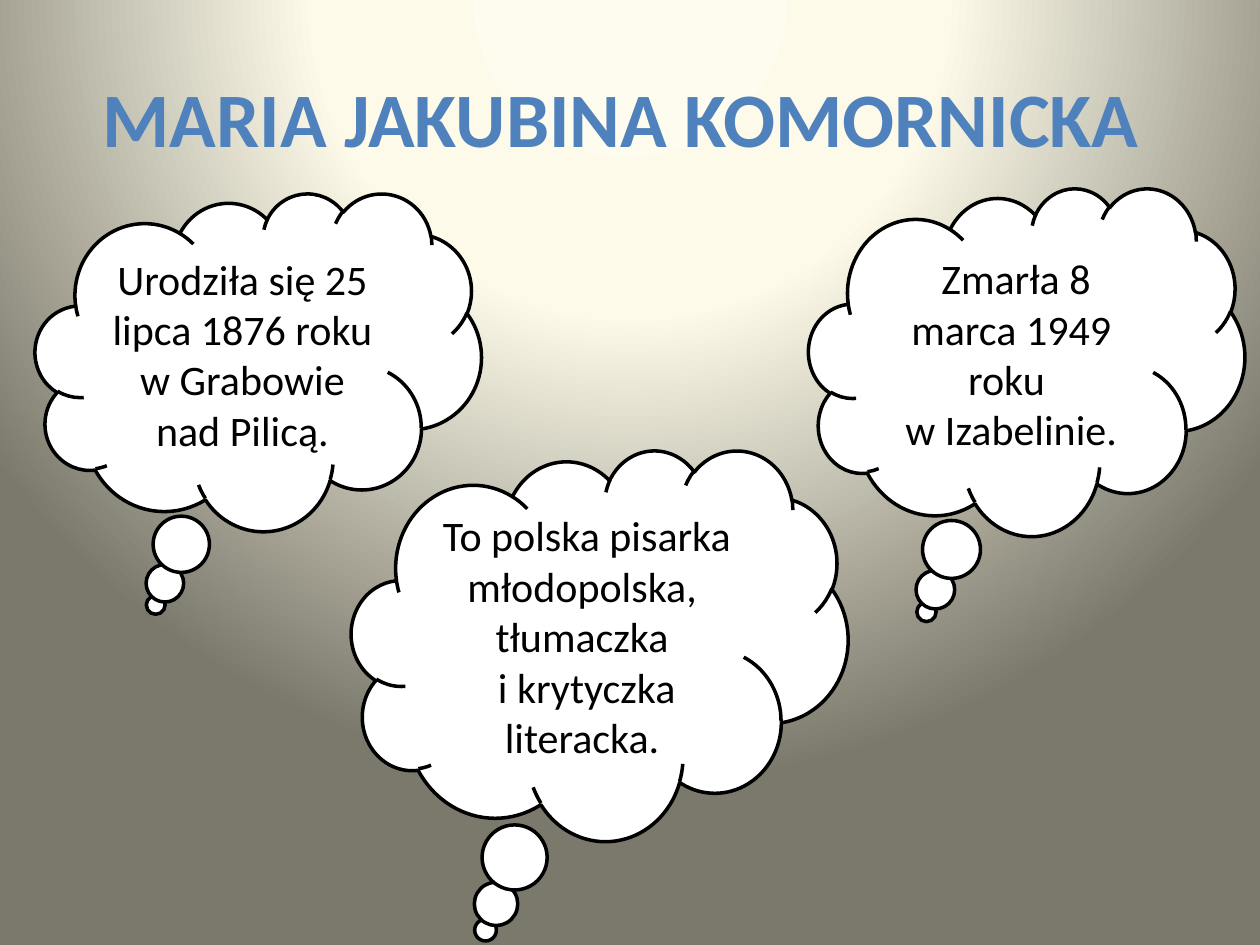
from dataclasses import dataclass
from lxml.etree import fromstring
from pptx import Presentation
from pptx.dml.color import RGBColor
from pptx.enum.shapes import MSO_SHAPE
from pptx.enum.text import MSO_ANCHOR, PP_ALIGN
from pptx.oxml.ns import nsdecls
from pptx.util import Pt


@dataclass(frozen=True)
class Theme:
    font: str = "Calibri"
    title: str = "4F81BD"
    ink: str = "000000"
    paper: str = "FFFFFF"
    title_size: int = 44
    body_size: int = 24
    backdrop: tuple = ((0, "FEFCEE"), (40, "FDFAEA"), (100, "7B796B"))


theme = Theme()


def add_run(p, text, size, color, bold=False):
    p.alignment = PP_ALIGN.CENTER
    r = p.add_run()
    r.text = text
    r.font.name = theme.font
    r.font.size = Pt(size)
    r.font.bold = bold
    r.font.color.rgb = RGBColor.from_string(color)


prs = Presentation()
prs.slide_width, prs.slide_height = Pt(720), Pt(540)
s = prs.slides.add_slide(prs.slide_layouts[5])

stops = "".join(
    f'<a:gs pos="{pos * 1000}"><a:srgbClr val="{color}"/></a:gs>'
    for pos, color in theme.backdrop
)
bg = fromstring(
    f'<p:bg {nsdecls("p", "a")}><p:bgPr><a:gradFill rotWithShape="1">'
    f'<a:gsLst>{stops}</a:gsLst><a:path path="circle">'
    '<a:fillToRect l="50000" t="-80000" r="50000" b="180000"/></a:path>'
    '</a:gradFill><a:effectLst/></p:bgPr></p:bg>'
)
s.element.cSld.insert(0, bg)

title = s.shapes.title
title.left, title.top, title.width, title.height = Pt(36), Pt(21.6), Pt(648), Pt(90)
title.text_frame.vertical_anchor = MSO_ANCHOR.MIDDLE
add_run(title.text_frame.paragraphs[0], "MARIA JAKUBINA KOMORNICKA ",
        theme.title_size, theme.title, bold=True)

clouds = [
    ((20.2, 110.2, 254.9, 193), (-0.23, 0.72),
     [["Urodziła się 25 lipca 1876 roku w Grabowie nad Pilicą."]]),
    ((462.2, 107.3, 249.1, 198.7), (-0.23, 0.72),
     [[" Zmarła 8 marca 1949 roku "], ["w Izabelinie."]]),
    ((200.9, 257, 283.7, 223.2), (-0.23, 0.73),
     [[" To polska pisarka młodopolska, tłumaczka", " i krytyczka literacka."]]),
]

for box, tail, paragraphs in clouds:
    sp = s.shapes.add_shape(MSO_SHAPE.CLOUD_CALLOUT, *map(Pt, box))
    sp.adjustments[0], sp.adjustments[1] = tail
    sp.shadow.inherit = False
    sp.fill.solid()
    sp.fill.fore_color.rgb = RGBColor.from_string(theme.paper)
    sp.line.color.rgb = RGBColor.from_string(theme.ink)
    sp.line.width = Pt(2)
    tf = sp.text_frame
    tf.word_wrap = True
    tf.vertical_anchor = MSO_ANCHOR.MIDDLE
    for i, lines in enumerate(paragraphs):
        p = tf.add_paragraph() if i else tf.paragraphs[0]
        for j, line in enumerate(lines):
            if j:
                p.add_line_break()
            add_run(p, line, theme.body_size, theme.ink)

prs.save("out.pptx")
